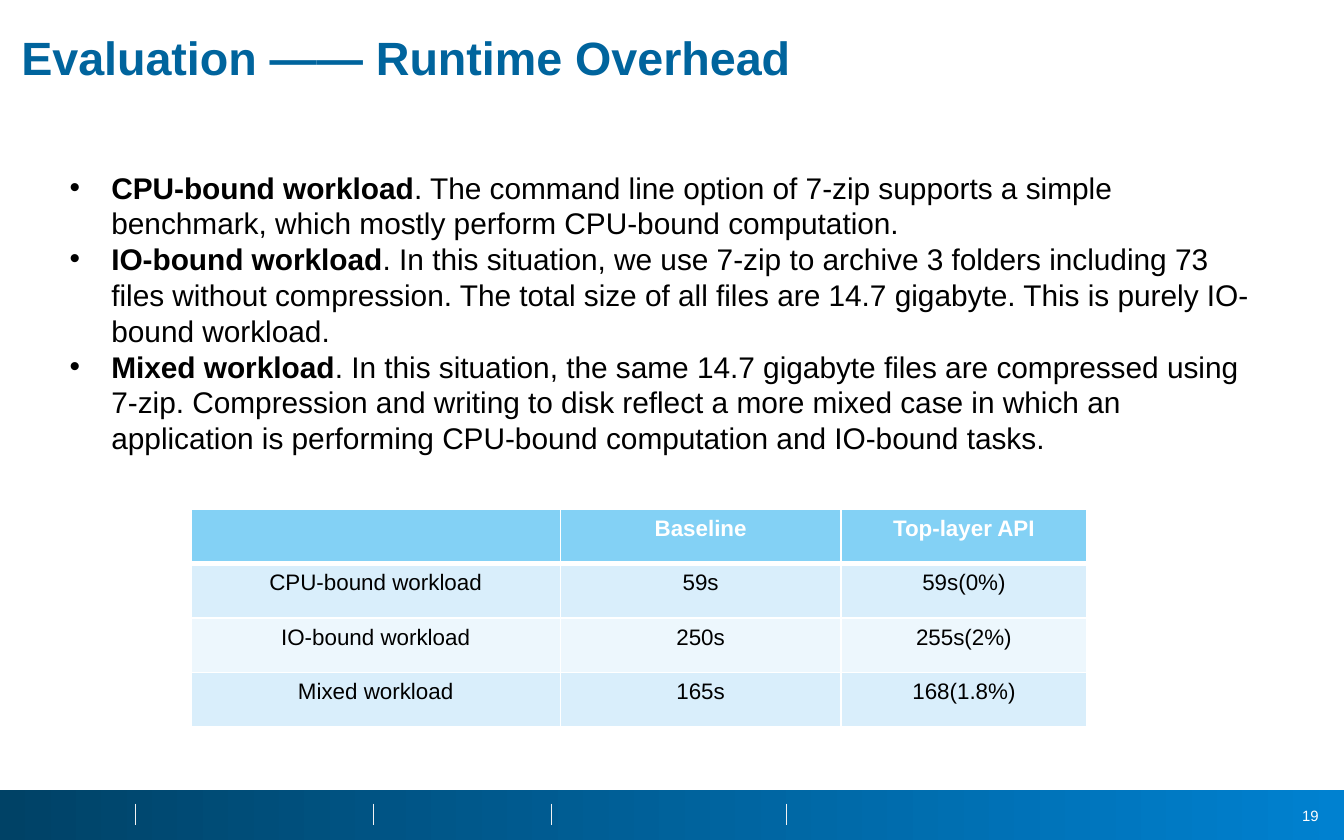
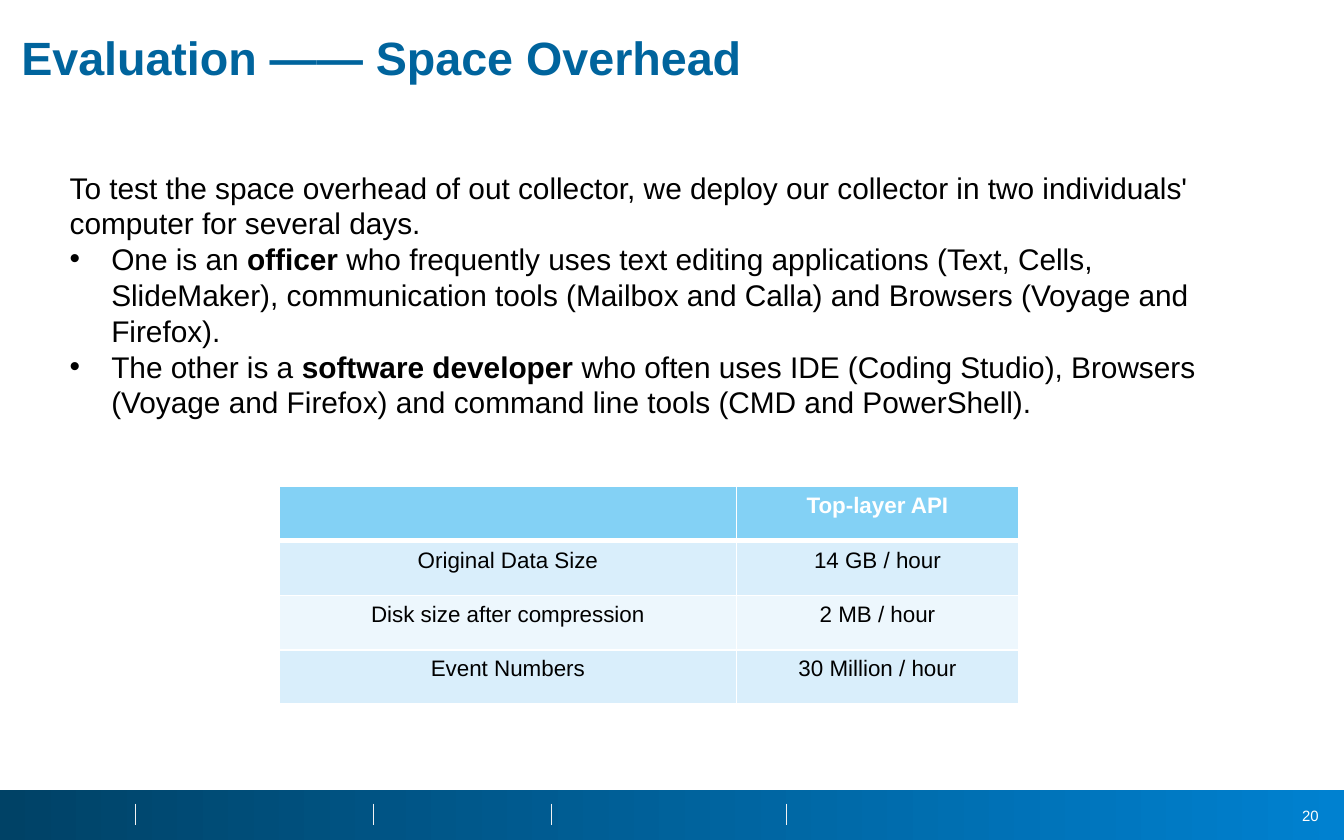
from dataclasses import dataclass

from pptx import Presentation
from pptx.dml.color import RGBColor as RGB
from pptx.enum.shapes import MSO_CONNECTOR as CONN, MSO_SHAPE as SHAPE
from pptx.enum.text import MSO_ANCHOR as ANCHOR, MSO_AUTO_SIZE as AUTO, PP_ALIGN as ALIGN
from pptx.oxml.ns import qn
from pptx.util import Inches, Pt
from lxml.etree import SubElement


@dataclass(frozen=True)
class Theme:
    """Colours, font and type sizes shared by the slides."""
    font: str = "Arial"
    title: str = "00649D"
    text: str = "000000"
    white: str = "FFFFFF"
    tick: str = "F2F2F2"
    band: tuple = ("004266", "0081D0")
    head: str = "83D1F5"
    rows: tuple = ("D9EEFB", "EDF7FD")
    title_pt: int = 25
    body_pt: int = 16
    table_pt: int = 12
    number_pt: int = 8
    indent: float = 0.31


@dataclass(frozen=True)
class Box:
    """A rectangle that hands out areas of itself in percent."""
    x: int
    y: int
    w: int
    h: int

    def area(self, x, y, w, h):
        """Return the area at the given percentages of this box."""
        return Box(round(self.x + self.w * x / 100), round(self.y + self.h * y / 100),
                   round(self.w * w / 100), round(self.h * h / 100))

    @property
    def frame(self):
        """Return left, top, width and height."""
        return self.x, self.y, self.w, self.h


T = Theme()
PAGE = Box(0, 0, Inches(10), Inches(6.25))


def write(p, text, *, size, color=T.text, bold=False, align=None, bullet=False, spacing=None):
    """Write text into a paragraph, with **marked** words in bold."""
    if bullet:
        pPr = p._p.get_or_add_pPr()
        pPr.set("marL", str(Inches(T.indent)))
        pPr.set("indent", str(-Inches(T.indent)))
        SubElement(pPr, qn("a:buFont")).set("typeface", T.font)
        SubElement(pPr, qn("a:buChar")).set("char", "•")
    p.alignment = align
    p.line_spacing = spacing
    for i, piece in enumerate(text.split("**")):
        if piece:
            r = p.add_run()
            r.text = piece
            r.font.name = T.font
            r.font.size = Pt(size)
            r.font.bold = bold or i % 2 == 1
            r.font.color.rgb = RGB.from_string(color)


def text_frame(s, box, anchor=ANCHOR.TOP, auto=AUTO.NONE):
    """Add a wrapping text box and return its frame."""
    tf = s.shapes.add_textbox(*box.frame).text_frame
    tf.word_wrap = True
    tf.vertical_anchor = anchor
    tf.auto_size = auto
    return tf


def add_footer(s, box, number):
    """Draw the gradient band with its ticks and slide number."""
    sp = s.shapes.add_shape(SHAPE.RECTANGLE, *box.frame)
    sp.shadow.inherit = False
    sp.line.fill.background()
    sp.fill.gradient()
    sp.fill.gradient_angle = 0
    for stop, position, color in zip(sp.fill.gradient_stops, (0, 1), T.band):
        stop.position = position
        stop.color.rgb = RGB.from_string(color)
    tf = text_frame(s, box.area(94.9, 20, 4.2, 64), ANCHOR.MIDDLE)
    write(tf.paragraphs[0], str(number), size=T.number_pt, color=T.white, align=ALIGN.RIGHT)
    for x in (10.1, 27.8, 41, 58.5):
        tick = box.area(x, 28, 0, 43)
        ln = s.shapes.add_connector(CONN.STRAIGHT, tick.x, tick.y, tick.x, tick.y + tick.h)
        ln.line.color.rgb = RGB.from_string(T.tick)
        ln.line.width = Pt(0.25)
        SubElement(ln._element.spPr, qn("a:effectLst"))


def add_title(s, box, title):
    """Write the slide title."""
    write(text_frame(s, box).paragraphs[0], title, size=T.title_pt, color=T.title,
          bold=True, spacing=0.9)


def add_body(s, box, lead, points):
    """Write an optional lead sentence and the bulleted points."""
    tf = text_frame(s, box, auto=AUTO.SHAPE_TO_FIT_TEXT)
    items = [(lead, False)] if lead else []
    items += [(point, True) for point in points]
    for i, (text, bullet) in enumerate(items):
        p = tf.add_paragraph() if i else tf.paragraphs[0]
        write(p, text, size=T.body_pt, bullet=bullet)


def style_cell(cell, fill, top, bottom):
    """Give a cell its white borders and its fill."""
    tcPr = cell._tc.get_or_add_tcPr()
    for side, width in zip("LRTB", (1, 1, top, bottom)):
        ln = SubElement(tcPr, qn(f"a:ln{side}"), w=str(Pt(width)))
        SubElement(SubElement(ln, qn("a:solidFill")), qn("a:srgbClr")).set("val", T.white)
    cell.fill.solid()
    cell.fill.fore_color.rgb = RGB.from_string(fill)


def add_results(s, box, shares, rows):
    """Build the results table with columns in percent of its box."""
    table = s.shapes.add_table(len(rows), len(shares), *box.frame).table
    for column, share in zip(table.columns, shares):
        column.width = box.area(0, 0, share, 0).w
    for i, row in enumerate(rows):
        head = i == 0
        fill = T.head if head else T.rows[(i - 1) % 2]
        for j, text in enumerate(row):
            cell = table.cell(i, j)
            style_cell(cell, fill, 3 if i == 1 else 1, 3 if head else 1)
            write(cell.text_frame.paragraphs[0], text, size=T.table_pt, bold=head,
                  color=T.white if head else T.text, align=ALIGN.CENTER)


def add_evaluation(prs, number, topic, points, body_height, table_box, shares, rows, lead=""):
    """Add one evaluation slide: title, text, results table and footer."""
    s = prs.slides.add_slide(prs.slide_layouts[6])
    add_footer(s, PAGE.area(0, 94, 100, 6), number)
    add_title(s, PAGE.area(0.6, 3.36, 95.9, 5.76), f"Evaluation —— {topic}")
    add_body(s, PAGE.area(4.2, 19.36, 89.9, body_height), lead, points)
    add_results(s, PAGE.area(*table_box), shares, rows)


def main():
    """Build and save the two evaluation slides."""
    prs = Presentation()
    prs.slide_width, prs.slide_height = PAGE.w, PAGE.h
    add_evaluation(
        prs, 19, "Runtime Overhead",
        ["**CPU-bound workload**. The command line option of 7-zip supports a simple "
         "benchmark, which mostly perform CPU-bound computation.",
         "**IO-bound workload**. In this situation, we use 7-zip to archive 3 folders "
         "including 73 files without compression. The total size of all files are "
         "14.7 gigabyte. This is purely IO-bound workload.",
         "**Mixed workload**. In this situation, the same 14.7 gigabyte files are "
         "compressed using 7-zip. Compression and writing to disk reflect a more mixed "
         "case in which an application is performing CPU-bound computation and "
         "IO-bound tasks."],
        36.16, (14.2, 60.64, 66.7, 25.92), (41.25, 31.25, 27.5),
        [("", "Baseline", "Top-layer API"),
         ("CPU-bound workload", "59s", "59s(0%)"),
         ("IO-bound workload", "250s", "255s(2%)"),
         ("Mixed workload", "165s", "168(1.8%)")])
    add_evaluation(
        prs, 20, "Space Overhead",
        ["One is an **officer** who frequently uses text editing applications (Text, "
         "Cells, SlideMaker), communication tools (Mailbox and Calla) and Browsers "
         "(Voyage and Firefox).",
         "The other is a **software developer** who often uses IDE (Coding Studio), "
         "Browsers (Voyage and Firefox) and command line tools (CMD and PowerShell)."],
        31.84, (20.8, 57.92, 55, 25.92), (61.8, 38.2),
        [("", "Top-layer API"),
         ("Original Data Size", "14 GB / hour"),
         ("Disk size after compression", "2 MB / hour"),
         ("Event Numbers", "30 Million / hour")],
        lead="To test the space overhead of out collector, we deploy our collector in "
             "two individuals' computer for several days.")
    prs.save("out.pptx")


if __name__ == "__main__":
    main()
